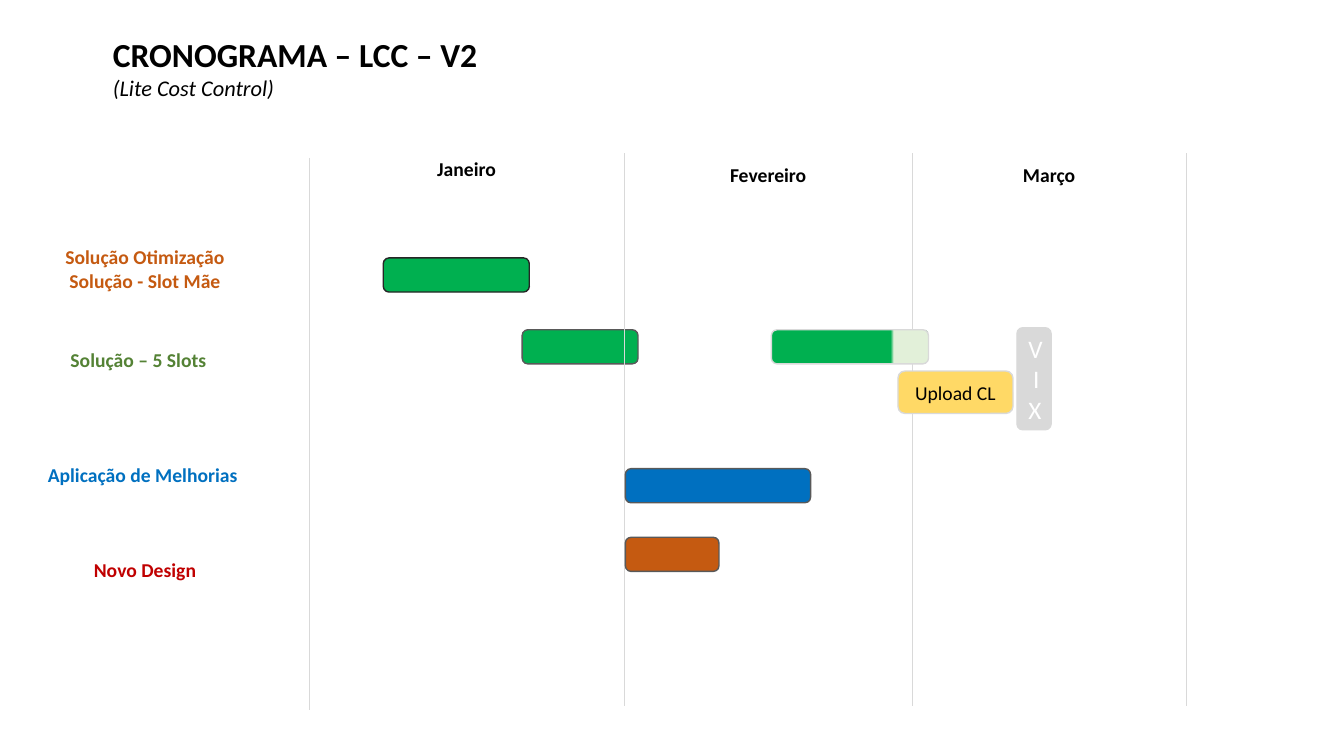
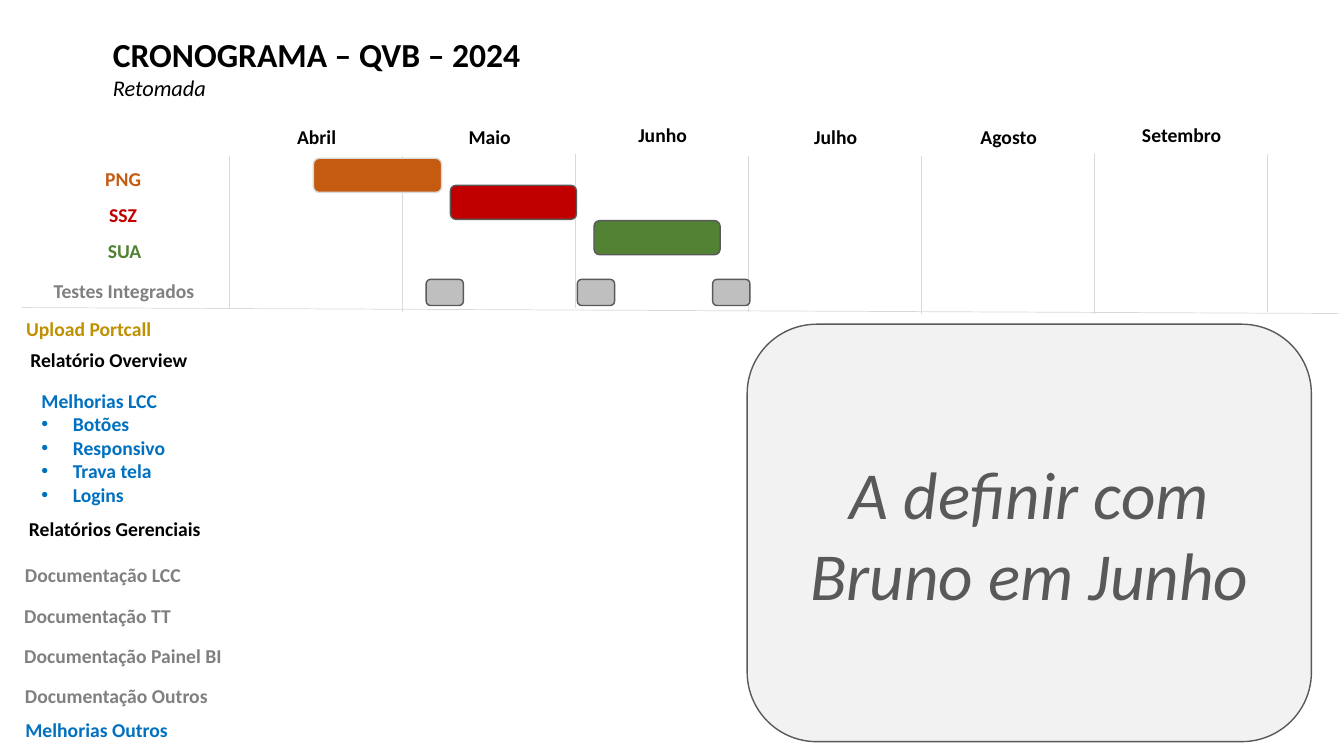
from lxml import etree
from pptx import Presentation, util as u
from pptx.dml.color import RGBColor
from pptx.enum import shapes, text
from pptx.oxml.ns import qn

HUE = dict(black="000000", white="FFFFFF", rust="C55A11", moss="548235",
           blue="0070C0", red="C00000", green="00B050", mint="E2F0D9",
           sun="FFD966", gold="BF9000", gray="808080", silver="BFBFBF",
           pale="D9D9D9", mist="F2F2F2", slate="595959", dark="262626")
LEFT, MID, RIGHT = text.PP_ALIGN.LEFT, text.PP_ALIGN.CENTER, text.PP_ALIGN.RIGHT
BOLD = dict(size=u.Pt(14), bold=True, italic=False)
HEAD = dict(size=u.Pt(24), bold=True, italic=False)
SUB = dict(size=u.Pt(16), bold=False, italic=True)
ROW = 0.86
WIDE, SLIM, NARROW = 5.49, 5.16, 3.99
MONTH = 4.42
STEP, START = 4.36, 5.77

PLAN = dict(
    layout=5,
    title=("CRONOGRAMA – LCC – V2", "(Lite Cost Control)"),
    months=[("Janeiro", 9.55, 3.84), ("Fevereiro", 17.15, 3.98),
            ("Março", 24.23, 3.98)],
    labels=[("Solução Otimização\nSolução - Slot Mãe", 0.91, 6.05, WIDE, "rust", MID),
            ("Solução – 5 Slots", 0.91, 8.64, SLIM, "moss", MID),
            ("Aplicação de Melhorias ", 0.91, 11.53, WIDE, "blue", MID),
            ("Novo Design", 0.91, 13.94, WIDE, "red", MID)],
    back=[(13.16, 8.31, 2.92, ROW, "green", "slate")],
    lines=[(7.8, 3.98, 7.8, 17.88)]
          + [(x, 3.86, x, 17.78) for x in (15.74, 22.99, 29.9)],
    bars=[(15.76, 11.81, 4.67, ROW, "blue", "slate"),
          (15.76, 13.54, 2.36, ROW, "rust", "slate"),
          (9.66, 6.5, 3.68, ROW, "green", "dark"),
          (25.63, 8.26, ROW, 2.57, "pale", "pale", "VIX", 18, "white", RIGHT, False),
          (19.44, 8.31, 3.96, ROW, ("green", "mint"), "pale"),
          (22.63, 9.35, 2.9, 1.07, "sun", "pale", "Upload CL", 14, "black", MID, False)],
    items=[])

NAMES = ["Abril", "Maio", "Junho", "Julho", "Agosto", "Setembro"]
TOPS = [3.94, 3.94, 3.89, 3.94, 3.94, 3.89, 3.89]
ENDS = [7.75, 7.85, 7.75, 7.85, 7.9, 7.9, 7.85]
EDGES = [START + STEP * i for i in range(7)]

RESTART = dict(
    layout=1,
    title=("CRONOGRAMA – QVB – 2024", "Retomada"),
    months=[(name, x, top - 0.92) for name, x, top in zip(NAMES, EDGES, TOPS)],
    labels=[("PNG", 0.36, 4.09, WIDE, "rust", MID),
            ("SSZ", 0.36, 5, WIDE, "red", MID),
            ("SUA", 0.56, 5.89, SLIM, "moss", MID),
            ("Testes Integrados", 0.38, 6.9, WIDE, "gray", MID),
            ("Upload Portcall", 0.41, 7.85, NARROW, "gold", LEFT),
            ("Relatório Overview", 0, 8.65, WIDE, "black", MID),
            ("Relatórios Gerenciais", 0.15, 12.9, WIDE, "black", MID),
            ("Documentação LCC", 0.38, 14.05, WIDE, "gray", LEFT),
            ("Documentação TT", 0.36, 15.09, WIDE, "gray", LEFT),
            ("Documentação Painel BI", 0.36, 16.1, WIDE, "gray", LEFT),
            ("Documentação Outros", 0.38, 17.1, WIDE, "gray", LEFT),
            ("Melhorias Outros", 0.39, 17.96, WIDE, "blue", LEFT)],
    back=[],
    lines=[(x, top, x, end) for x, top, end in zip(EDGES, TOPS, ENDS)]
          + [(0.56, 7.75, 33.73, 7.9)],
    bars=[(14.97, 5.56, 3.18, ROW, "moss", "slate"),
          (11.35, 4.67, 3.18, ROW, "red", "slate"),
          (7.9, 3.99, 3.23, ROW, "rust", "pale")]
         + [(x, 7.04, 0.94, 0.66, "silver", "slate") for x in (10.74, 14.55, 17.96)]
         + [(18.83, 8.17, 14.22, 10.52, "mist", "slate",
             "A definir com Bruno em Junho", 48, "slate", MID, True)],
    items=["Melhorias LCC", "Botões", "Responsivo", "Trava tela", "Logins"])


def rgb(hue):
    return RGBColor.from_string(HUE[hue])


def put(obj, vals):
    for key, val in vals.items():
        setattr(obj, key, val)


def place(shape, x, y, w, h):
    put(shape, dict(left=u.Cm(x), top=u.Cm(y), width=u.Cm(w), height=u.Cm(h)))


def write(frame, rows, hue, align, anchor=text.MSO_ANCHOR.TOP):
    put(frame, dict(word_wrap=True, auto_size=text.MSO_AUTO_SIZE.NONE,
                    vertical_anchor=anchor))
    for i, (words, form) in enumerate(rows):
        para = frame.add_paragraph() if i else frame.paragraphs[0]
        put(para, dict(alignment=align, space_before=u.Pt(0)))
        run = para.add_run()
        run.text = words
        put(run.font, dict(form, name="Calibri"))
        run.font.color.rgb = rgb(hue)


def label(slide, words, x, y, w, hue, align):
    rows = [(row, BOLD) for row in words.split("\n")]
    box = slide.shapes.add_textbox(u.Cm(x), u.Cm(y), u.Cm(w),
                                   u.Cm(ROW + 0.59 * (len(rows) - 1)))
    write(box.text_frame, rows, hue, align)


def rule(slide, *ends):
    line = slide.shapes.add_connector(shapes.MSO_CONNECTOR.STRAIGHT,
                                      *[u.Cm(end) for end in ends])
    line.line.color.rgb = rgb("pale")
    line.line.width = u.Pt(0.5)
    etree.SubElement(line._element.spPr, qn("a:effectLst"))


def bar(slide, x, y, w, h, fill, edge, words="", size=14, ink="black",
        align=MID, slant=False):
    shape = slide.shapes.add_shape(shapes.MSO_SHAPE.ROUNDED_RECTANGLE,
                                   u.Cm(x), u.Cm(y), u.Cm(w), u.Cm(h))
    shape.shadow.inherit = False
    if isinstance(fill, tuple):
        shape.fill.gradient()
        shape.fill.gradient_angle = 0
        for stop, hue, spot in zip(shape.fill.gradient_stops, fill, (0.76, 0.78)):
            stop.color.rgb = rgb(hue)
            stop.position = spot
    else:
        shape.fill.solid()
        shape.fill.fore_color.rgb = rgb(fill)
    shape.line.color.rgb = rgb(edge)
    shape.line.width = u.Pt(1)
    if words:
        form = dict(size=u.Pt(size), bold=False, italic=slant)
        write(shape.text_frame, [(words, form)], ink, align, text.MSO_ANCHOR.MIDDLE)


def listing(body, items):
    place(body, 0.79, 9.67, NARROW, 3.25)
    write(body.text_frame, [(item, BOLD) for item in items], "blue", LEFT)
    for i, para in enumerate(body.text_frame.paragraphs):
        props = para._p.get_or_add_pPr()
        dent = u.Cm(0.79) if i else 0
        props.set("marL", str(dent))
        props.set("indent", str(-dent))
        if not i:
            etree.SubElement(props, qn("a:buNone"))


def build(deck, plan):
    slide = deck.slides.add_slide(deck.slide_layouts[plan["layout"]])
    title = slide.shapes.title
    place(title, 2.59, 0.73, 13.97, 1.96)
    write(title.text_frame, zip(plan["title"], (HEAD, SUB)), "black", LEFT)
    if plan["items"]:
        listing(slide.placeholders[1], plan["items"])
    for name, x, y in plan["months"]:
        label(slide, name, x, y, MONTH, "black", MID)
    for key, draw in (("labels", label), ("back", bar), ("lines", rule), ("bars", bar)):
        for part in plan[key]:
            draw(slide, *part)


deck = Presentation()
put(deck, dict(slide_width=u.Cm(33.87), slide_height=u.Cm(19.05)))
for plan in (PLAN, RESTART):
    build(deck, plan)
deck.save("out.pptx")
